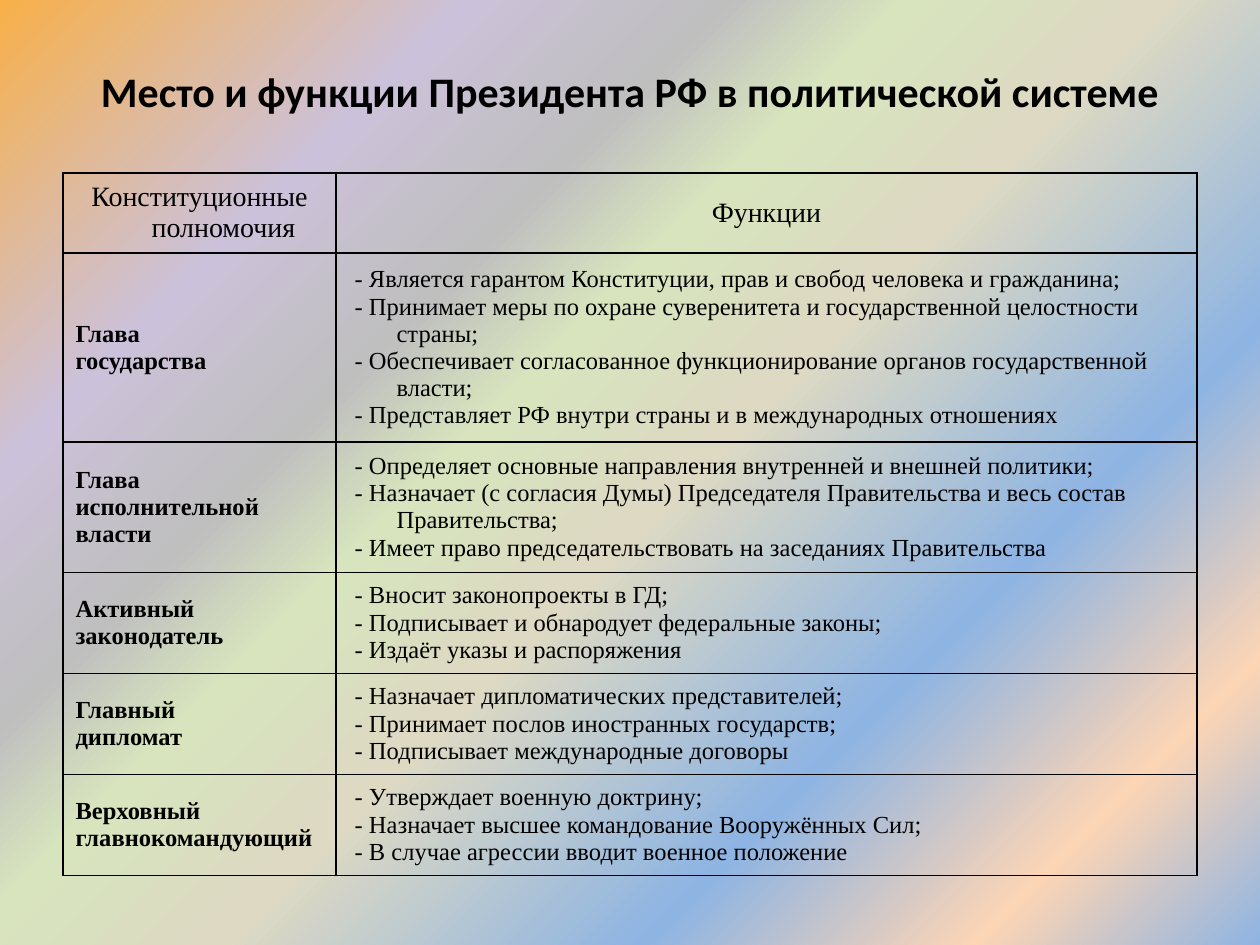
from dataclasses import dataclass

from pptx import Presentation
from pptx.dml.color import RGBColor as RGB
from pptx.enum.text import MSO_ANCHOR as ANCHOR, PP_ALIGN as ALIGN
from pptx.oxml import parse_xml
from pptx.oxml.ns import nsdecls
from pptx.util import Pt

PX = 914400 / 126  # EMU per px


@dataclass(frozen=True)
class Theme:
    ink: str = "000000"
    title_font: str = "Calibri"
    table_font: str = "Times New Roman"
    title: int = 24
    header: int = 16
    body: int = 14
    border: int = 1
    gradient: tuple = ((0, "8EB4E3"), (13, "FCD5B5"), (28, "8EB4E3"), (47, "DDD9C3"),
                       (59, "D7E4BD"), (67, "BFBFBF"), (79, "CCC1DA"), (100, "F8B049"))


T = Theme()


def px(n):
    return round(n * PX)


def write(tf, lines, size, font=T.table_font, bold=False, align=ALIGN.LEFT, hang=0):
    """Put one paragraph per line; hang is the hanging indent in px."""
    tf.word_wrap = True
    for i, line in enumerate(lines):
        p = tf.paragraphs[0] if i == 0 else tf.add_paragraph()
        p.alignment = align
        if hang:
            pPr = p._p.get_or_add_pPr()
            pPr.set("marL", str(px(hang)))
            pPr.set("indent", str(-px(hang)))
        r = p.add_run()
        r.text = line
        r.font.name, r.font.size, r.font.bold = font, Pt(size), bold
        r.font.color.rgb = RGB.from_string(T.ink)


HANG = 48
COLS = (273, 861)
ROWS = (79, 189, 130, 101, 101, 101)
HEADERS = ("Конституционные полномочия", "Функции")
# role lines, functions
POWERS = [
    (["Глава", "государства"],
     ["Является гарантом Конституции, прав и свобод человека и гражданина;",
      "Принимает меры по охране суверенитета и государственной целостности страны;",
      "Обеспечивает согласованное функционирование органов государственной власти;",
      "Представляет РФ внутри страны и в международных отношениях"]),
    (["Глава", "исполнительной", "власти"],
     ["Определяет основные направления внутренней и внешней политики;",
      "Назначает (с согласия Думы) Председателя Правительства и весь состав Правительства;",
      "Имеет право председательствовать на заседаниях Правительства"]),
    (["Активный", "законодатель"],
     ["Вносит законопроекты в ГД;",
      "Подписывает и обнародует федеральные законы;",
      "Издаёт указы и распоряжения"]),
    (["Главный", "дипломат"],
     ["Назначает дипломатических представителей;",
      "Принимает послов иностранных государств;",
      "Подписывает международные договоры"]),
    (["Верховный главнокомандующий"],
     ["Утверждает военную доктрину;",
      "Назначает высшее командование Вооружённых Сил;",
      "В случае агрессии вводит военное положение"]),
]

prs = Presentation()
prs.slide_width, prs.slide_height = px(1260), px(945)
s = prs.slides.add_slide(prs.slide_layouts[6])

# Background gradient
stops = "".join(f'<a:gs pos="{pos * 1000}"><a:srgbClr val="{color}"/></a:gs>'
                for pos, color in T.gradient)
s._element.cSld.insert(0, parse_xml(
    f'<p:bg {nsdecls("p", "a")}><p:bgPr><a:gradFill><a:gsLst>{stops}</a:gsLst>'
    '<a:path path="circle"><a:fillToRect l="100000" t="100000"/></a:path>'
    '<a:tileRect r="-100000" b="-100000"/></a:gradFill><a:effectLst/></p:bgPr></p:bg>'))

# Title
sp = s.shapes.add_textbox(px(63), px(59), px(1134), px(98))
write(sp.text_frame, ["Место и функции Президента РФ в политической системе"], T.title,
      font=T.title_font, bold=True, align=ALIGN.CENTER)

# Table
table = s.shapes.add_table(len(ROWS), len(COLS), px(63), px(173),
                           px(sum(COLS)), px(sum(ROWS))).table
table.first_row = table.horz_banding = False
for column, width in zip(table.columns, COLS):
    column.width = px(width)
for row, height in zip(table.rows, ROWS):
    row.height = px(height)

for cell in table.iter_cells():
    cell.vertical_anchor = ANCHOR.MIDDLE
    cell.fill.background()
    for i, side in enumerate("LRTB"):
        cell._tc.tcPr.insert(i, parse_xml(
            f'<a:ln{side} {nsdecls("a")} w="{Pt(T.border)}"><a:solidFill>'
            f'<a:srgbClr val="{T.ink}"/></a:solidFill></a:ln{side}>'))

for c, header in enumerate(HEADERS):
    write(table.cell(0, c).text_frame, [header], T.header, align=ALIGN.CENTER, hang=HANG)
for i, (role, functions) in enumerate(POWERS, 1):
    write(table.cell(i, 0).text_frame, role, T.body, bold=True,
          hang=HANG if len(role) > 1 else 0)
    write(table.cell(i, 1).text_frame, [f" - {f}" for f in functions], T.body, hang=HANG)

prs.save("out.pptx")
